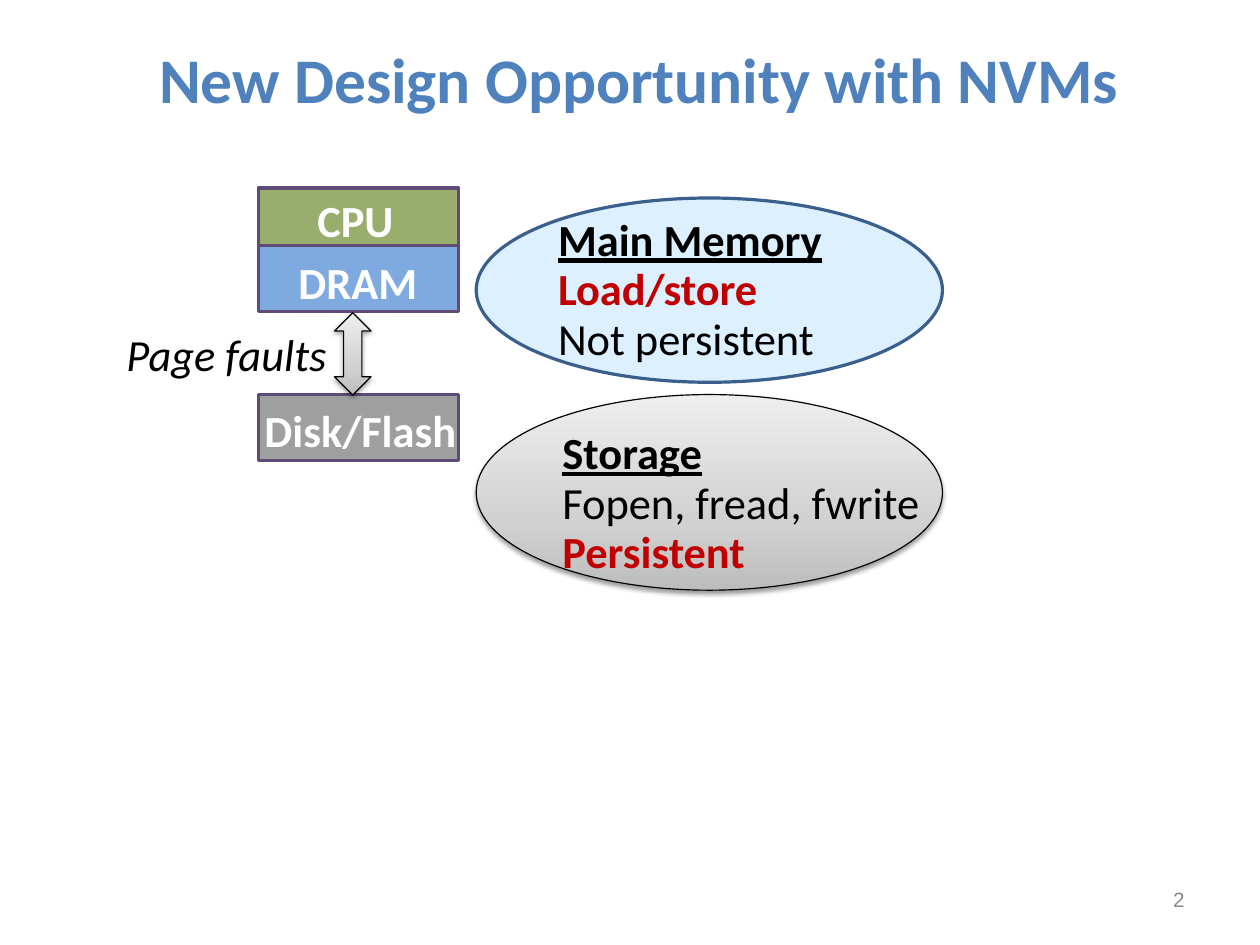
from lxml import etree
from pptx import Presentation
from pptx.dml.color import RGBColor
from pptx.enum import shapes, text
from pptx.oxml import parse_xml
from pptx.oxml.ns import nsdecls, qn
from pptx.util import Cm, Emu, Pt

BLACK = RGBColor(0x00, 0x00, 0x00)
WHITE = RGBColor(0xFF, 0xFF, 0xFF)
RED = RGBColor(0xC0, 0x00, 0x00)
TITLE_BLUE = RGBColor(0x4F, 0x81, 0xBD)
NUMBER_GRAY = RGBColor(0x89, 0x89, 0x89)
CPU_GREEN = RGBColor(0x77, 0x93, 0x3C)
DRAM_BLUE = RGBColor(0x55, 0x8E, 0xD5)
DISK_GRAY = RGBColor(0x80, 0x80, 0x80)
MEMORY_BLUE = RGBColor(0xBD, 0xE3, 0xFF)
MEMORY_EDGE = RGBColor(0x3A, 0x5F, 0x8C)
STACK_EDGE = RGBColor(0x5F, 0x4A, 0x78)
SILVER = ((0, RGBColor(0xBD, 0xBD, 0xBD)), (35, RGBColor(0xD1, 0xD1, 0xD1)),
          (100, RGBColor(0xEE, 0xEE, 0xEE)))

# Content: places are left, top, width, height in percent of the slide
TITLE = "New Design Opportunity with NVMs"
TITLE_PLACE = (6.1, 3.6, 89.2, 11.7)
NUMBER_PLACE = (71.6, 92.5, 23.3, 5.3)
STACK_LEFT, STACK_WIDTH = 20.5, 15.9
ELLIPSE_LEFT, ELLIPSE_WIDTH = 37.8, 37
LABEL_HEIGHT, NOTE_HEIGHT = 6.5, 17.2
DISK_TOP = 41.75
ARROW_PLACE = (26.55, 33.1, 2.9, 8.7)

# label, fill, top, height, label left, label top, label width
STACK = [
    ("Disk/Flash", DISK_GRAY, DISK_TOP, 7, 20.1, 42.6, 17.4),
    ("CPU", CPU_GREEN, 19.9, 6.1, 24.3, 20.3, 9.8),
    ("DRAM", DRAM_BLUE, 26, 7, 22.8, 26.85, 11.3),
]
HEADING = dict(bold=True, underline=True)
HIGHLIGHT = dict(bold=True, color=RED)
MEMORY_NOTE = [("Main Memory", HEADING), ("Load/store", HIGHLIGHT),
               ("Not persistent", {})]
STORAGE_NOTE = [("Storage", HEADING), ("Fopen, fread, fwrite", {}),
                ("Persistent", HIGHLIGHT)]

presentation = Presentation()
presentation.slide_width, presentation.slide_height = Cm(28), Cm(21)
slide = presentation.slides.add_slide(presentation.slide_layouts[5])


def box(left, top, width, height):
    across, down = presentation.slide_width / 100, presentation.slide_height / 100
    return [Emu(round(value)) for value in
            (left * across, top * down, width * across, height * down)]


def add_run(paragraph, words, size=28, color=BLACK, font="Calibri",
            bold=False, italic=False, underline=False):
    run = paragraph.add_run()
    run.text = words
    run.font.size, run.font.name = Pt(size), font
    run.font.bold, run.font.italic, run.font.underline = bold, italic, underline
    run.font.color.rgb = color


def add_text(place, lines, align=text.PP_ALIGN.LEFT, spacing=0.93):
    frame = slide.shapes.add_textbox(*box(*place)).text_frame
    frame.word_wrap = True
    for index, (words, style) in enumerate(lines):
        paragraph = frame.add_paragraph() if index else frame.paragraphs[0]
        paragraph.alignment, paragraph.line_spacing = align, spacing
        add_run(paragraph, words, **style)
    return frame


def add_figure(kind, place, edge, edge_width):
    shape = slide.shapes.add_shape(kind, *box(*place))
    shape.shadow.inherit = False
    shape.line.color.rgb, shape.line.width = edge, Pt(edge_width)
    return shape


def add_tinted(kind, place, fill, opacity, edge):
    shape = add_figure(kind, place, edge, 2)
    shape.fill.solid()
    shape.fill.fore_color.rgb = fill
    color = shape._element.spPr.find(qn("a:solidFill"))[0]
    etree.SubElement(color, qn("a:alpha"), val=str(opacity * 1000))


def add_silver(kind, place):
    shape = add_figure(kind, place, BLACK, 0.75)
    properties = shape._element.spPr
    stops = "".join(f'<a:gs pos="{at * 1000}"><a:srgbClr val="{color}"/></a:gs>'
                    for at, color in SILVER)
    gradient = parse_xml(f'<a:gradFill {nsdecls("a")} rotWithShape="1"><a:gsLst>{stops}'
                         '</a:gsLst><a:lin ang="16200000" scaled="0"/></a:gradFill>')
    properties.find(qn("a:prstGeom")).addnext(gradient)
    properties.find(qn("a:effectLst")).append(parse_xml(
        f'<a:outerShdw {nsdecls("a")} blurRad="{Pt(3.1)}" dist="{Pt(1.6)}" dir="5400000" '
        'rotWithShape="0"><a:srgbClr val="000000"><a:alpha val="38000"/></a:srgbClr>'
        '</a:outerShdw>'))


# Title and slide number
title = slide.shapes.title
title.left, title.top, title.width, title.height = box(*TITLE_PLACE)
title.text_frame.vertical_anchor = text.MSO_ANCHOR.TOP
title.text_frame.auto_size = text.MSO_AUTO_SIZE.NONE
title.text_frame.paragraphs[0].alignment = text.PP_ALIGN.CENTER
add_run(title.text_frame.paragraphs[0], TITLE, 40, TITLE_BLUE, bold=True)
number = add_text(NUMBER_PLACE, [("2", dict(size=13, color=NUMBER_GRAY, font="Arial"))],
                  text.PP_ALIGN.RIGHT, 1.0)
number.vertical_anchor = text.MSO_ANCHOR.MIDDLE

# Memory and storage ellipses with their notes
OVAL = shapes.MSO_SHAPE.OVAL
add_tinted(OVAL, (ELLIPSE_LEFT, 20.95, ELLIPSE_WIDTH, 19.5), MEMORY_BLUE, 50, MEMORY_EDGE)
add_text((43.4, 22.3, 30.1, NOTE_HEIGHT), MEMORY_NOTE)
add_silver(OVAL, (ELLIPSE_LEFT, DISK_TOP, ELLIPSE_WIDTH, 20.7))
add_text((43.75, 44.9, 36.5, NOTE_HEIGHT), STORAGE_NOTE)

# Hardware stack
for label, fill, top, height, label_left, label_top, label_width in STACK:
    add_tinted(shapes.MSO_SHAPE.RECTANGLE, (STACK_LEFT, top, STACK_WIDTH, height),
               fill, 75, STACK_EDGE)
    add_text((label_left, label_top, label_width, LABEL_HEIGHT),
             [(label, dict(color=WHITE, bold=True))])

# Page faults between DRAM and disk
add_text((6.2, 34.5, 20.6, LABEL_HEIGHT), [("Page faults", dict(italic=True))],
         text.PP_ALIGN.RIGHT)
add_silver(shapes.MSO_SHAPE.UP_DOWN_ARROW, ARROW_PLACE)

presentation.save("out.pptx")
